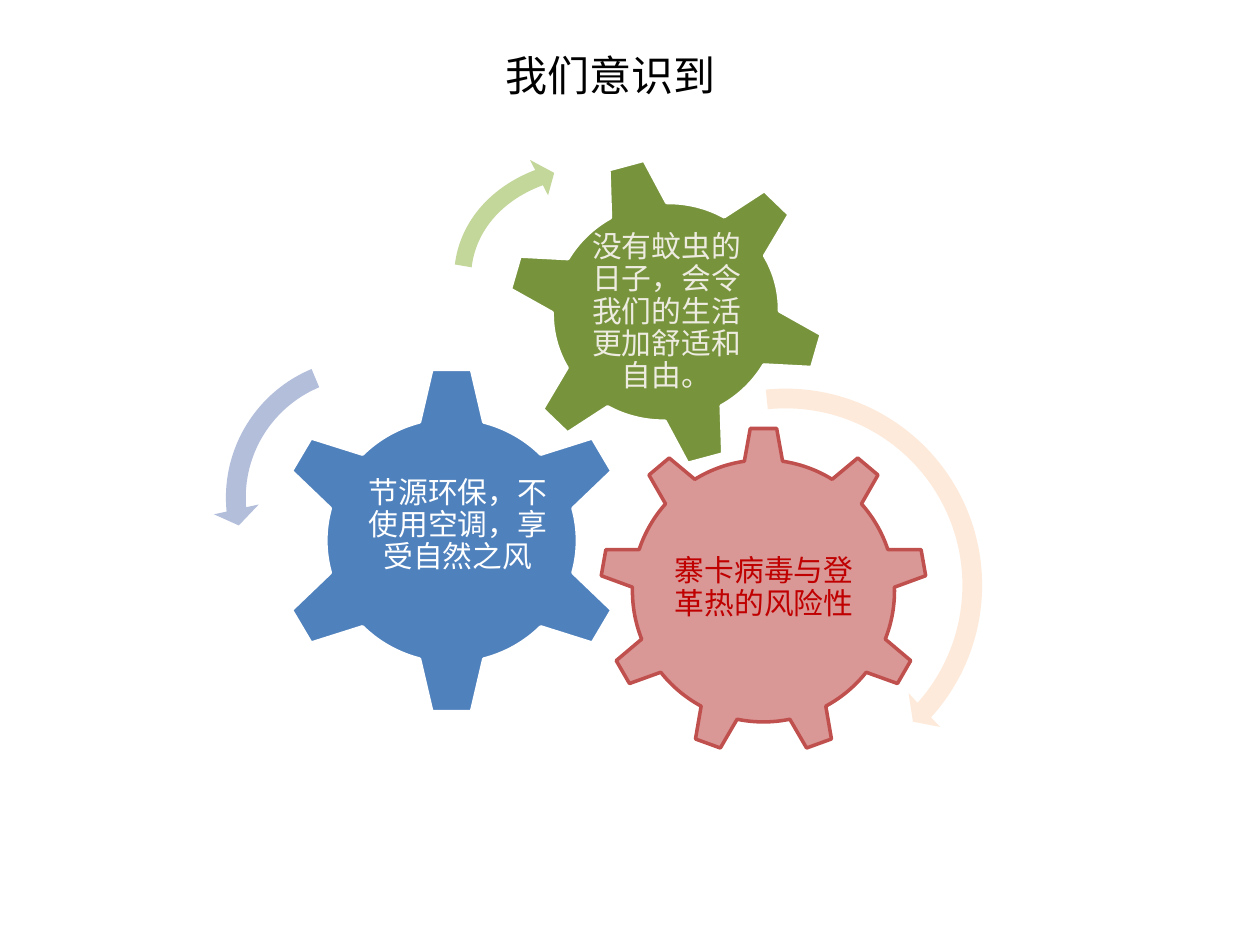
"""Build the slide of three interlocking gears with turning arrows."""
from typing import NamedTuple

from pptx import Presentation
from pptx import util as u
from pptx.dml.color import RGBColor
from pptx.enum import shapes, text

Box = tuple[float, float, float, float]
GEAR_TEXT = {"size": u.Pt(17), "name": "Calibri"}
TITLE_TEXT = {"size": u.Pt(24), "name": "Calibri"}
GEAR_PARAGRAPH = {
    "alignment": text.PP_ALIGN.CENTER,
    "line_spacing": 0.9,
    "space_after": u.Pt(7.1),
}
TITLE_PARAGRAPH = {"alignment": text.PP_ALIGN.LEFT}


class Part(NamedTuple):
    preset: shapes.MSO_SHAPE
    box: Box
    adjustments: tuple[float, ...]
    fill: str
    rotation: float = 0


class Gear(NamedTuple):
    body: Part
    outline: str
    label_box: Box
    label: str
    label_color: str


GEARS = [
    Gear(Part(shapes.MSO_SHAPE.GEAR_9, (4.76, 3.39, 2.6, 2.6), (0.1, 0.018), "D99795"),
         "C0504D", (5.29, 4, 1.55, 1.34), "寨卡病毒与登革热的风险性", "C00000"),
    Gear(Part(shapes.MSO_SHAPE.GEAR_6, (2.17, 2.9, 2.83, 2.78), (0.15, 0.035), "4F81BD"),
         "FFFFFF", (2.87, 3.6, 1.53, 1.15), "节源环保，不使用空调，享受自然之风", "FFFFFF"),
    Gear(Part(shapes.MSO_SHAPE.GEAR_6, (4.01, 1.24, 2.55, 2.47), (0.15, 0.035), "77943D", 345),
         "FFFFFF", (4.58, 1.78, 1.42, 1.4),
         "没有蚊虫的日子，会令我们的生活更加舒适和自由。", "EEECE1"),
]
ARROWS = [
    Part(shapes.MSO_SHAPE.CIRCULAR_ARROW, (4.57, 2.98, 3.33, 3.33),
         (0.047, 2.99, 25.191, 158.549, 0.055), "FEEADA"),
    Part(shapes.MSO_SHAPE.LEFT_CIRCULAR_ARROW, (1.69, 2.74, 2.42, 2.42),
         (0.065, 4.3, 104.891, 148.378, 0.075), "B3BEDB"),
    Part(shapes.MSO_SHAPE.CIRCULAR_ARROW, (3.5, 1.19, 2.76, 2.25),
         (0.06, 3.941, 133.138, 105.082, 0.07), "C4D79B", 14.5),
]


def color(value: str) -> RGBColor:
    return RGBColor.from_string(value)


def apply(target, values: dict) -> None:
    for name, value in values.items():
        setattr(target, name, value)


def draw_part(slide, part: Part, outline: str | None = None) -> None:
    shape = slide.shapes.add_shape(part.preset, *map(u.Inches, part.box))
    shape.shadow.inherit = False
    shape.rotation = part.rotation
    for index, value in enumerate(part.adjustments):
        shape.adjustments[index] = value
    shape.fill.solid()
    shape.fill.fore_color.rgb = color(part.fill)
    if outline:
        shape.line.color.rgb = color(outline)
        shape.line.width = u.Pt(2)
    else:
        shape.line.fill.background()


def draw_text(slide, box: Box, wording: str, ink: str, insets: Box,
              paragraph_format: dict, font_format: dict) -> None:
    frame = slide.shapes.add_textbox(*map(u.Inches, box)).text_frame
    sides = ("margin_left", "margin_top", "margin_right", "margin_bottom")
    apply(frame, dict(zip(sides, map(u.Inches, insets))))
    apply(frame, {"word_wrap": True, "vertical_anchor": text.MSO_ANCHOR.MIDDLE})
    paragraph = frame.paragraphs[0]
    apply(paragraph, paragraph_format)
    run = paragraph.add_run()
    run.text = wording
    apply(run.font, font_format)
    run.font.color.rgb = color(ink)


def draw_gear(slide, gear: Gear) -> None:
    draw_part(slide, gear.body, gear.outline)
    draw_text(slide, gear.label_box, gear.label, gear.label_color,
              (0.02, 0.02, 0.02, 0.02), GEAR_PARAGRAPH, GEAR_TEXT)


def main() -> None:
    deck = Presentation()
    deck.slide_width, deck.slide_height = u.Inches(10), u.Inches(7.5)
    slide = deck.slides.add_slide(deck.slide_layouts[6])
    draw_text(slide, (3.73, 0.28, 2.43, 0.63), "我们意识到", "000000",
              (0.28, 0.05, 0.1, 0.05), TITLE_PARAGRAPH, TITLE_TEXT)
    for gear in GEARS:
        draw_gear(slide, gear)
    for arrow in ARROWS:
        draw_part(slide, arrow)
    deck.save("out.pptx")


if __name__ == "__main__":
    main()
